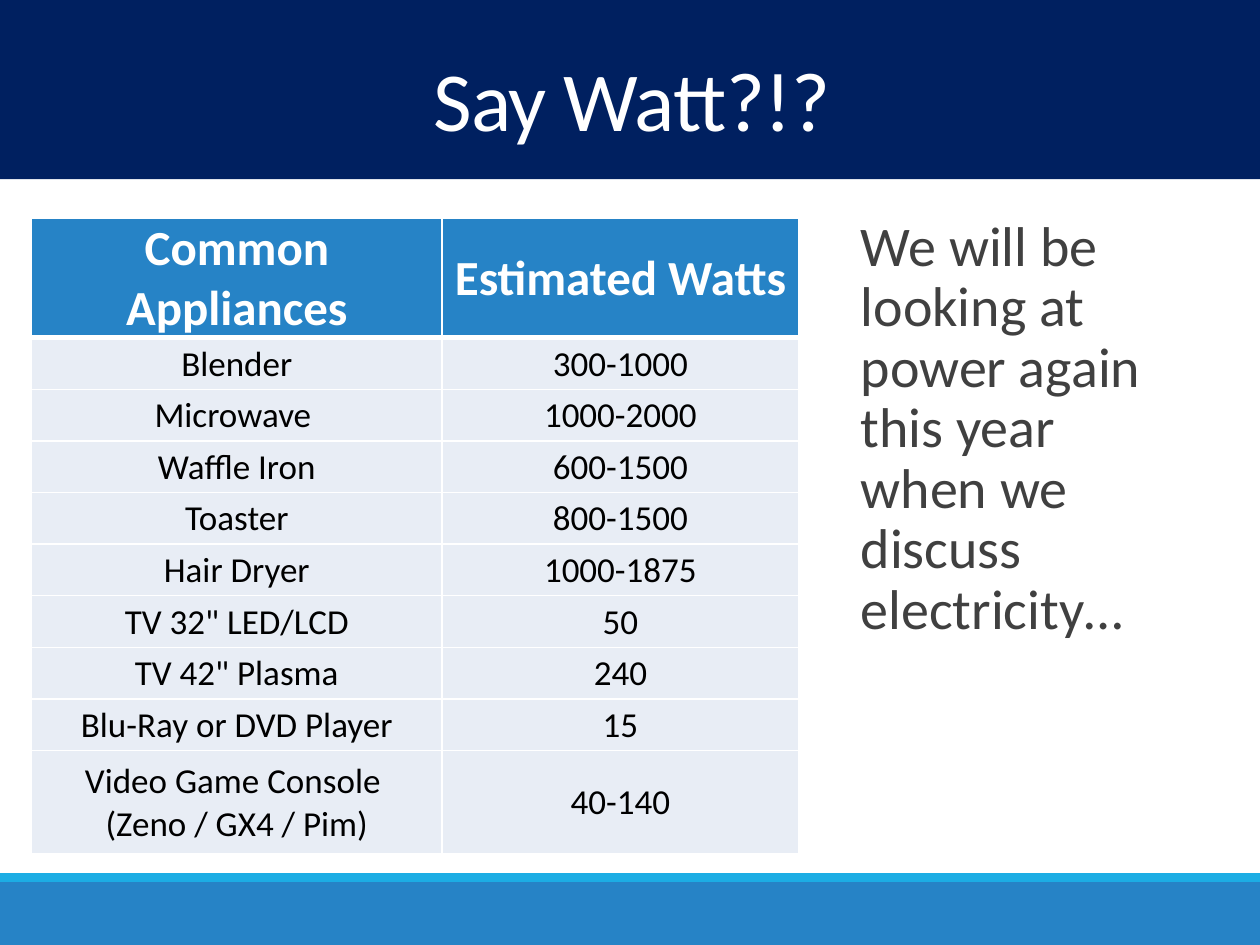
"""Build the appliance wattage slide."""
from lxml.etree import SubElement
from pptx import Presentation
from pptx.dml.color import RGBColor
from pptx.enum.shapes import MSO_SHAPE
from pptx.enum.text import MSO_ANCHOR, PP_ALIGN
from pptx.oxml.ns import qn
from pptx.util import Pt

WHITE = RGBColor(0xFF, 0xFF, 0xFF)
BLACK = RGBColor(0, 0, 0)
NAVY = RGBColor(0x00, 0x20, 0x60)
BLUE = RGBColor(0x26, 0x83, 0xC6)
CYAN = RGBColor(0x1C, 0xAD, 0xE4)
PALE = RGBColor(0xE8, 0xED, 0xF5)
GRAY = RGBColor(0x40, 0x40, 0x40)


def format_runs(paragraph, size, color, bold=False):
    for run in paragraph.runs:
        run.font.name = "Calibri"
        run.font.size = Pt(size)
        run.font.bold = bold
        run.font.color.rgb = color


def add_border(cell, side, width):
    line = SubElement(cell._tc.get_or_add_tcPr(), qn(f"a:{side}"), w=str(Pt(width)))
    fill = SubElement(line, qn("a:solidFill"))
    SubElement(fill, qn("a:srgbClr"), val=str(WHITE))


presentation = Presentation()
presentation.slide_width = Pt(720)
presentation.slide_height = Pt(540)
slide = presentation.slides.add_slide(presentation.slide_layouts[6])

for top, height, color in [(504, 36, BLUE), (499, 5, CYAN), (0, 102.4, NAVY)]:
    band = slide.shapes.add_shape(MSO_SHAPE.RECTANGLE, Pt(0), Pt(top), Pt(720), Pt(height))
    band.shadow.inherit = False
    band.fill.solid()
    band.fill.fore_color.rgb = color
    band.line.fill.background()

title = slide.shapes.add_textbox(Pt(2), Pt(30), Pt(718), Pt(60.5))
title.text_frame.word_wrap = True
title.text_frame.vertical_anchor = MSO_ANCHOR.MIDDLE
title.text_frame.text = "Say Watt?!?"
paragraph = title.text_frame.paragraphs[0]
paragraph.alignment = PP_ALIGN.CENTER
paragraph.line_spacing = 0.85
format_runs(paragraph, 48, WHITE)
paragraph.runs[0].font._element.set("spc", "-50")

rows = [
    ("Common Appliances", "Estimated Watts"),
    ("Blender", "300-1000"),
    ("Microwave ", "1000-2000"),
    ("Waffle Iron", "600-1500"),
    ("Toaster", "800-1500"),
    ("Hair Dryer", "1000-1875"),
    ('TV 32" LED/LCD', "50"),
    ('TV 42" Plasma', "240"),
    ("Blu-Ray or DVD Player", "15"),
    ("Video Game Console \n(Zeno / GX4 / Pim)", "40-140"),
]
row_heights = [68.4] + [29.5] * 8 + [59]
column_widths = [234.7, 203.8]
table = slide.shapes.add_table(
    len(rows), 2, Pt(18), Pt(124.6), Pt(sum(column_widths)), Pt(sum(row_heights))
).table
for column, width in zip(table.columns, column_widths):
    column.width = Pt(width)
for row_index, (texts, height) in enumerate(zip(rows, row_heights)):
    table.rows[row_index].height = Pt(height)
    header = row_index == 0
    for column_index, text in enumerate(texts):
        cell = table.cell(row_index, column_index)
        cell.margin_left = cell.margin_right = cell.margin_top = Pt(0.7)
        cell.margin_bottom = Pt(0)
        cell.vertical_anchor = MSO_ANCHOR.MIDDLE
        for side in ("lnL", "lnR", "lnT", "lnB"):
            thick = (header and side == "lnB") or (row_index == 1 and side == "lnT")
            add_border(cell, side, 3 if thick else 1)
        cell.fill.solid()
        cell.fill.fore_color.rgb = BLUE if header else PALE
        cell.text_frame.text = text
        for paragraph in cell.text_frame.paragraphs:
            paragraph.alignment = PP_ALIGN.CENTER
            format_runs(paragraph, 28 if header else 20, WHITE if header else BLACK, header)

note = slide.shapes.add_textbox(Pt(484.6), Pt(121), Pt(198), Pt(235.4))
note.text_frame.word_wrap = True
note.text_frame.margin_left = note.text_frame.margin_right = Pt(0)
note.text_frame.text = "We will be looking at power again this year when we discuss electricity…"
paragraph = note.text_frame.paragraphs[0]
paragraph.line_spacing = 0.9
paragraph.space_before = Pt(12)
paragraph.space_after = Pt(2)
format_runs(paragraph, 32, GRAY)
properties = paragraph._p.get_or_add_pPr()
properties.set("marL", str(Pt(7.2)))
properties.set("indent", str(-Pt(7.2)))
bullet_color = SubElement(properties, qn("a:buClr"))
SubElement(bullet_color, qn("a:srgbClr"), val=str(CYAN))
SubElement(properties, qn("a:buFont"), typeface="Calibri")
SubElement(properties, qn("a:buChar"), char=" ")

presentation.save("out.pptx")
